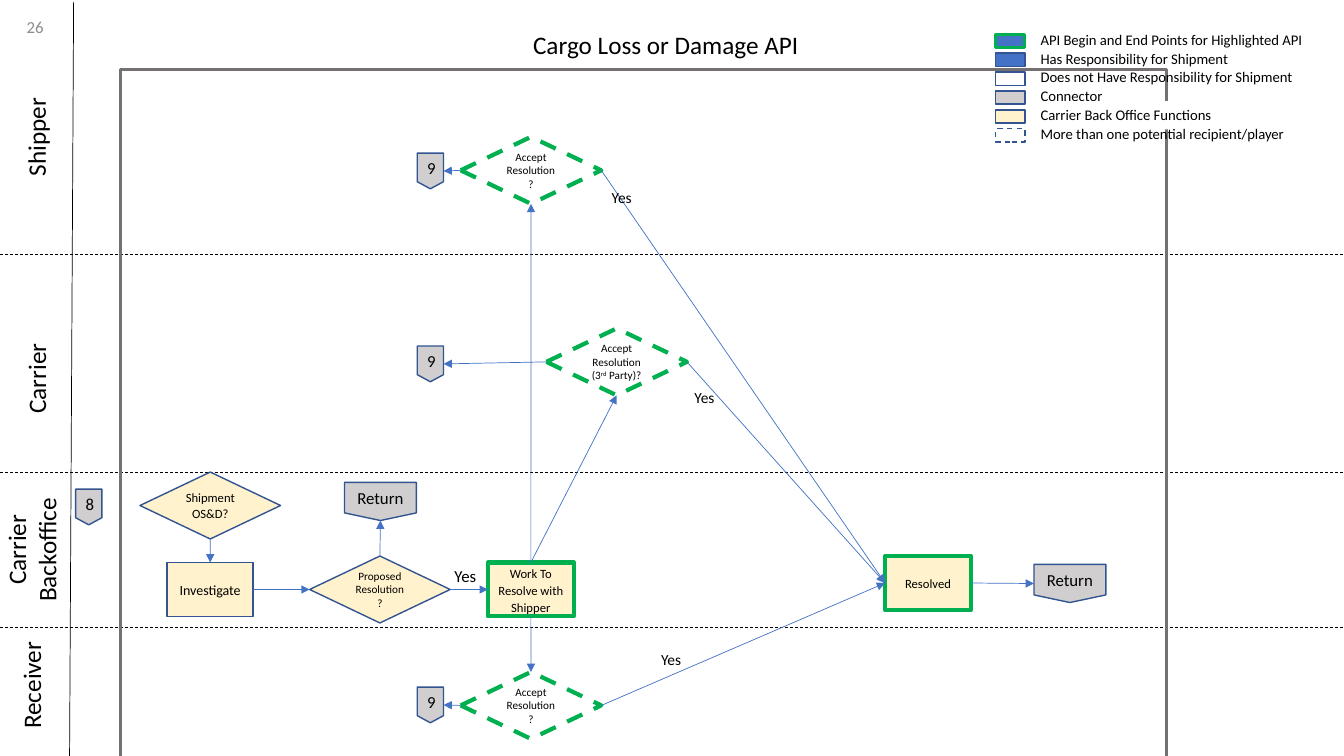
from pptx import Presentation
from pptx.util import Pt
from pptx.dml.color import RGBColor as Rgb
from pptx.enum.dml import MSO_LINE as Dash
from pptx.enum.shapes import MSO_CONNECTOR as Conn, MSO_SHAPE as Kind
from pptx.enum.text import MSO_ANCHOR as Anchor, PP_ALIGN as Align
from pptx.oxml.ns import qn
from lxml.etree import SubElement as Sub

THEME = {
    "font": "Calibri",
    "ink": "000000", "mute": "8C8C8C", "white": "FFFFFF", "cream": "FFF2CC",
    "gray": "D0CECE", "blue": "4472C4", "navy": "325491", "green": "00B050",
    "frame": "767171",
    "head": 18, "mark": 12, "yes": 11, "key": 10.5, "step": 10, "task": 9, "ask": 8,
}
WIDE, HIGH = 960, 540
DIAMOND, BOX = (100.4, 47.8), (61.4, 38.5)
TAG, EXIT = (18.8, 25.5), (51.3, 27.2)
ASK, STEP, OFF = (Kind.FLOWCHART_DECISION, Kind.FLOWCHART_PROCESS,
                  Kind.FLOWCHART_OFFPAGE_CONNECTOR)

LOOKS = {
    "check": (ASK, DIAMOND, "cream", "navy", 1, False, None),
    "accept": (ASK, DIAMOND, None, "green", 3, True, None),
    "work": (STEP, BOX, "cream", "navy", 1, False, 12),
    "point": (STEP, BOX, "cream", "green", 3, False, 12),
    "tag": (OFF, TAG, "gray", "navy", 1, False, None),
    "exit": (OFF, EXIT, "gray", "navy", 1, False, None),
}
NODES = {
    "claim": ("check", 100, 337.2, "Shipment OS&D?", "task"),
    "entry": ("tag", 54, 349.4, "8", "mark"),
    "study": ("work", 119.4, 401.8, "Investigate", "step"),
    "offer": ("check", 221.2, 397.2, "Proposed Resolution?", "ask"),
    "settle": ("point", 348.5, 401.8, "Work To Resolve with Shipper", "task"),
    "shipper": ("accept", 329.1, 97.8, "Accept Resolution?", "ask"),
    "carrier": ("accept", 390.3, 234.6, "Accept Resolution(3^rd^ Party)?", "ask"),
    "receiver": ("accept", 329.1, 480, "Accept Resolution?", "ask"),
    "done": ("point", 632.2, 397.2, "Resolved", "task"),
    "nine a": ("tag", 298, 109.4, "9", "mark"),
    "nine b": ("tag", 298, 247.2, "9", "mark"),
    "nine c": ("tag", 298, 490.8, "9", "mark"),
    "end": ("exit", 738.6, 403.2, "Return", "mark"),
    "back": ("exit", 246.1, 344.6, "Return", "mark"),
}
TOP, LEFT, BASE, RIGHT = range(4)
ARROWS = [
    ("claim", BASE, "study", TOP), ("study", RIGHT, "offer", LEFT),
    ("offer", RIGHT, "settle", LEFT), ("offer", TOP, "back", BASE),
    ("settle", TOP, "carrier", BASE), ("settle", TOP, "shipper", BASE),
    ("settle", BASE, "receiver", TOP), ("receiver", RIGHT, "done", LEFT),
    ("carrier", RIGHT, "done", LEFT), ("shipper", RIGHT, "done", LEFT),
    ("receiver", LEFT, "nine c", RIGHT), ("carrier", LEFT, "nine b", RIGHT),
    ("shipper", LEFT, "nine a", RIGHT), ("done", RIGHT, "end", LEFT),
]
LANES = [
    ("Shipper", -10.1, 82.8, 71.3, 28.8, None),
    ("Carrier", -10.1, 252, 72, 28.8, None),
    ("Carrier Backoffice", -25.2, 367.2, 95.8, 51.1, Align.CENTER),
    ("Receiver", -18, 473, 80.6, 28.8, None),
]
RULES = [(0, 181.4, WIDE, 181.4, True), (0, 337.7, WIDE, 337.7, True),
         (0, 447.8, WIDE, 447.8, True), (52.6, 1.4, 49.7, HIGH, False)]
YESES = [(465.1, 460.8, "yes"), (488.9, 273.6, "yes"),
         (429.8, 131, "yes"), (317.5, 400.3, "mark")]
KEYS = [
    ("API Begin and End Points for Highlighted API", "blue", "green", 2.25, False),
    ("Has Responsibility for Shipment", "blue", "navy", 1, False),
    ("Does not Have Responsibility for Shipment", "white", "navy", 1, False),
    ("Connector", "gray", "navy", 1, False),
    ("Carrier Back Office Functions", "cream", "navy", 1, False),
    ("More than one potential recipient/player", None, "navy", 1, True),
]
COVER = 4

deck = Presentation()
deck.slide_width, deck.slide_height = Pt(WIDE), Pt(HIGH)
page = deck.slides.add_slide(deck.slide_layouts[6]).shapes


def tint(name):
    return Rgb.from_string(THEME[name])


def put(item, form):
    for name, val in form.items():
        if val is not None:
            setattr(item, name, val)


def stroke(line, hue, size, dash):
    line.fill.solid()
    line.fill.fore_color.rgb = tint(hue)
    put(line, {"width": Pt(size), "dash_style": Dash.DASH if dash else None})


def paint(item, hue):
    if hue:
        item.fill.solid()
        item.fill.fore_color.rgb = tint(hue)
    else:
        item.fill.background()


def write(item, text, size, hue="ink", anchor=Anchor.TOP, **form):
    put(item.text_frame, {"word_wrap": True, "vertical_anchor": anchor})
    para = item.text_frame.paragraphs[0]
    put(para, form)
    for spot, part in enumerate(text.split("^")):
        run = para.add_run()
        run.text = part
        put(run.font, {"name": THEME["font"], "size": Pt(THEME[size])})
        run.font.color.rgb = tint(hue)
        if spot % 2:
            run.font._element.set("baseline", "30000")


def shape(host, kind, area, fill, hue, size, dash):
    item = host.add_shape(kind, *map(Pt, area))
    item.shadow.inherit = False
    paint(item, fill)
    stroke(item.line, hue, size, dash)
    return item


def label(host, area, text, size, **form):
    item = host.add_textbox(*map(Pt, area))
    write(item, text, size, **form)
    return item


def link(ends, hue, dash=False):
    item = page.add_connector(Conn.STRAIGHT, *map(Pt, ends))
    stroke(item.line, hue, 0.5, dash)
    Sub(item._element.spPr, qn("a:effectLst"))
    return item


for *ends, dash in RULES:
    link(ends, "ink", dash)
for text, *area, align in LANES:
    label(page, area, text, "head", alignment=align).rotation = 270

made = {}
for name, (look, x, y, text, size) in NODES.items():
    kind, dims, fill, hue, line, dash, lead = LOOKS[look]
    made[name] = shape(page, kind, (x, y, *dims), fill, hue, line, dash)
    write(made[name], text, size, anchor=Anchor.MIDDLE, alignment=Align.CENTER,
          line_spacing=Pt(lead) if lead else None)

for start, out, stop, into in ARROWS:
    arrow = link((0, 0, 0, 0), "blue")
    arrow.begin_connect(made[start], out)
    arrow.end_connect(made[stop], into)
    Sub(arrow.line._get_or_add_ln(), qn("a:tailEnd"), type="triangle")

for x, y, size in YESES:
    label(page, (x, y, 34, 21), "Yes", size)

label(page, (10.8, 4.9, 27.4, 28.8), "26", "mark", hue="mute",
      anchor=Anchor.MIDDLE, alignment=Align.RIGHT)
shape(page, Kind.RECTANGLE, (86.4, 49.7, 746.6, 493.2), None, "frame", 2.25, False)
label(page, (373.7, 15.8, 212.4, 29.5), "Cargo Loss or Damage API", "head",
      line_spacing=1.06, space_after=Pt(8))

legend = page.add_group_shape().shapes
for row, (text, *look) in enumerate(KEYS):
    drop = 13.5 * row
    shape(legend, Kind.RECTANGLE, (711.2, 24.5 + drop, 20.9, 9.4), *look)
    note = label(legend, (736.2, 18.2 + drop, 216, 20.2), text, "key")
    if row == COVER:
        paint(note, "white")

deck.save("out.pptx")
